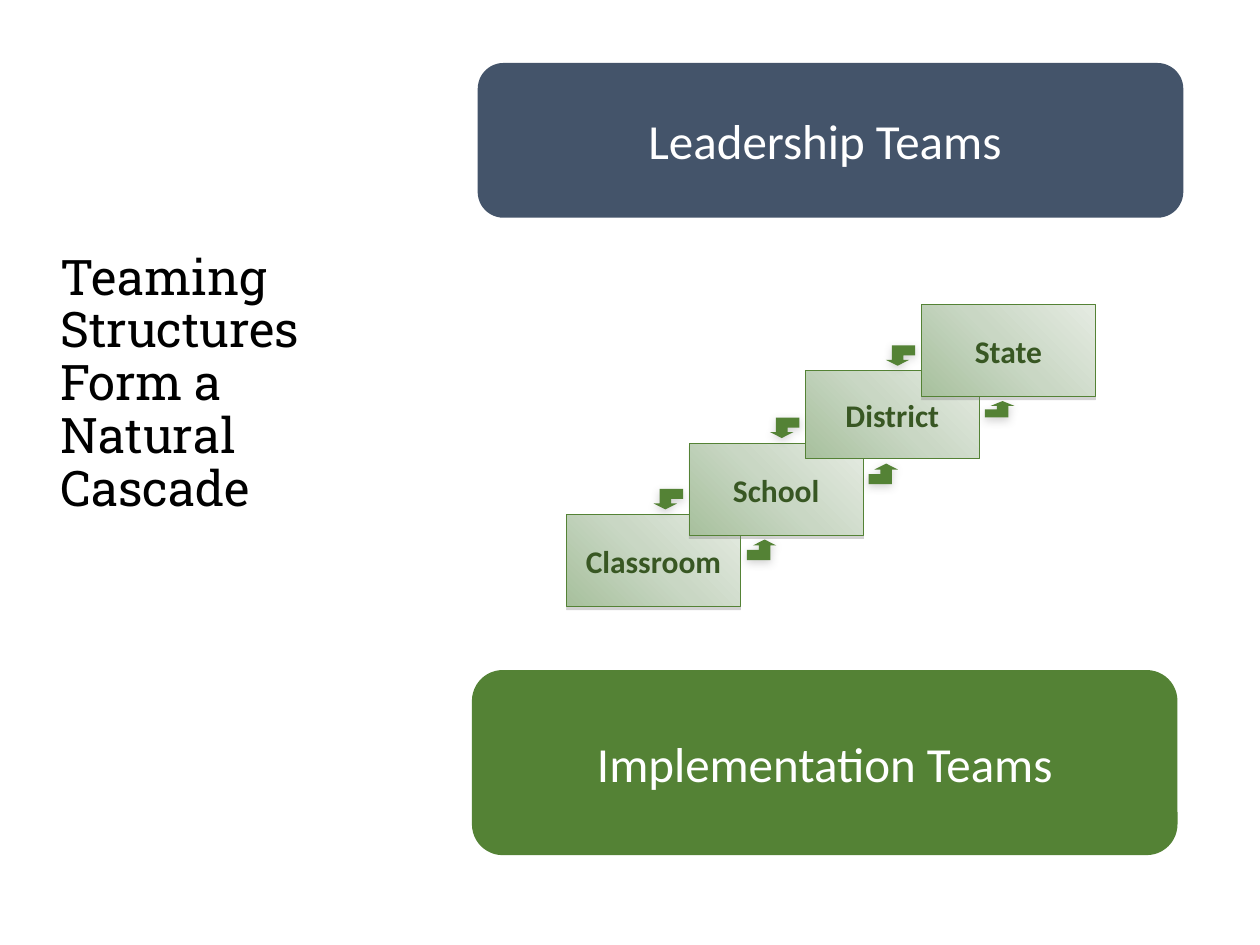
import copy

import pptx
import pptx.dml.color
import pptx.enum.shapes
import pptx.enum.text
import pptx.oxml
import pptx.oxml.ns
import pptx.util

Pt = pptx.util.Pt
SHAPE = pptx.enum.shapes.MSO_SHAPE
ALIGN = pptx.enum.text.PP_ALIGN
MIDDLE = pptx.enum.text.MSO_ANCHOR.MIDDLE
COLORS = {
    name: pptx.dml.color.RGBColor.from_string(value)
    for name, value in {
        "black": "000000",
        "white": "FFFFFF",
        "slate": "44546A",
        "green": "548235",
        "dark green": "385723",
        "step start": "A7C09D",
        "step middle": "C9D7C4",
        "step end": "E5EBE2",
    }.items()
}


def add_box(preset, left, top, width, height, text, size, color, bold=False):
    box = page.shapes.add_shape(preset, Pt(left), Pt(top), Pt(width), Pt(height))
    box.shadow.inherit = False
    frame = box.text_frame
    frame.word_wrap = True
    frame.vertical_anchor = MIDDLE
    frame.text = text
    para = frame.paragraphs[0]
    para.alignment = ALIGN.CENTER
    span = para.runs[0]
    span.font.name = "Calibri"
    span.font.size = Pt(size)
    span.font.bold = bold
    span.font.color.rgb = COLORS[color]
    return box


def add_shadow(shape, blur):
    shape.shadow.inherit = False
    effects = shape.element.spPr.find(pptx.oxml.ns.qn("a:effectLst"))
    effects.append(pptx.oxml.parse_xml(
        f'<a:outerShdw {pptx.oxml.ns.nsdecls("a")} blurRad="{Pt(blur)}" '
        f'dist="{Pt(1.8)}" dir="5400000" algn="ctr" rotWithShape="0">'
        '<a:srgbClr val="808080"><a:alpha val="35000"/></a:srgbClr></a:outerShdw>'
    ))


deck = pptx.Presentation()
deck.slide_width, deck.slide_height = Pt(720), Pt(540)
page = deck.slides.add_slide(deck.slide_layouts[5])

title = page.shapes.title
title.left, title.top, title.width, title.height = Pt(27.4), Pt(85), Pt(175), Pt(270)
title.text_frame.text = "Teaming Structures Form a Natural Cascade"
title.text_frame.word_wrap = True
title.text_frame.auto_size = pptx.enum.text.MSO_AUTO_SIZE.NONE
title.text_frame.vertical_anchor = MIDDLE
para = title.text_frame.paragraphs[0]
para.alignment = ALIGN.LEFT
para.line_spacing = 0.9
span = para.runs[0]
span.font.name = "Roboto Slab"
span.font.size = Pt(28)
span.font.color.rgb = COLORS["black"]

# Cascade steps, from the lowest to the highest
steps = [
    ("Classroom", 323.7, 294, 52.7, True),
    ("School", 393.8, 253.4, 52.7, True),
    ("District", 460.2, 211.8, 50.3, False),
    ("State", 526.5, 174, 52.7, True),
]
for name, left, top, height, shaded in steps:
    step = add_box(SHAPE.RECTANGLE, left, top, 99.5, height, name, 18, "dark green", True)
    step.fill.gradient()
    step.fill.gradient_angle = 45
    stop_list = step.element.spPr.find(".//" + pptx.oxml.ns.qn("a:gsLst"))
    stop_list.insert(1, copy.deepcopy(stop_list[0]))
    for stop, position, part in zip(step.fill.gradient_stops, (0, 0.5, 1), ("start", "middle", "end")):
        stop.position = position
        stop.color.rgb = COLORS["step " + part]
    step.line.color.rgb = COLORS["green"]
    step.line.width = Pt(0.25)
    if shaded:
        add_shadow(step, 0)

# Bent arrow pointing up; turned by 180 degrees it points down
outline = [(0, 6), (6.8, 6), (6.8, 3.4), (3.4, 3.4), (10.1, 0), (16.8, 3.4), (13.4, 3.4), (13.4, 11.7), (0, 11.7)]
arrows = [
    (506.2, 197.3, 11.7, 180),
    (440, 238.6, 11.7, 180),
    (373.5, 279.4, 11.7, 180),
    (562.8, 229.2, 9.3, 0),
    (496.3, 264.9, 11.7, 0),
    (426.8, 308.3, 11.7, 0),
]
for left, top, height, turn in arrows:
    points = [(Pt(left + x), Pt(top + y * height / 11.7)) for x, y in outline]
    builder = page.shapes.build_freeform(*points[0])
    builder.add_line_segments(points[1:], close=True)
    arrow = builder.convert_to_shape()
    arrow.rotation = turn
    arrow.fill.solid()
    arrow.fill.fore_color.rgb = COLORS["green"]
    arrow.line.fill.background()
    add_shadow(arrow, 5)

banners = [
    ("Leadership Teams ", 273, 36, 88.4, "slate"),
    ("Implementation Teams", 269.7, 382.9, 105.8, "green"),
]
for text, left, top, height, color in banners:
    banner = add_box(SHAPE.ROUNDED_RECTANGLE, left, top, 403.2, height, text, 28, "white")
    banner.fill.solid()
    banner.fill.fore_color.rgb = COLORS[color]
    banner.line.fill.background()

deck.save("out.pptx")
